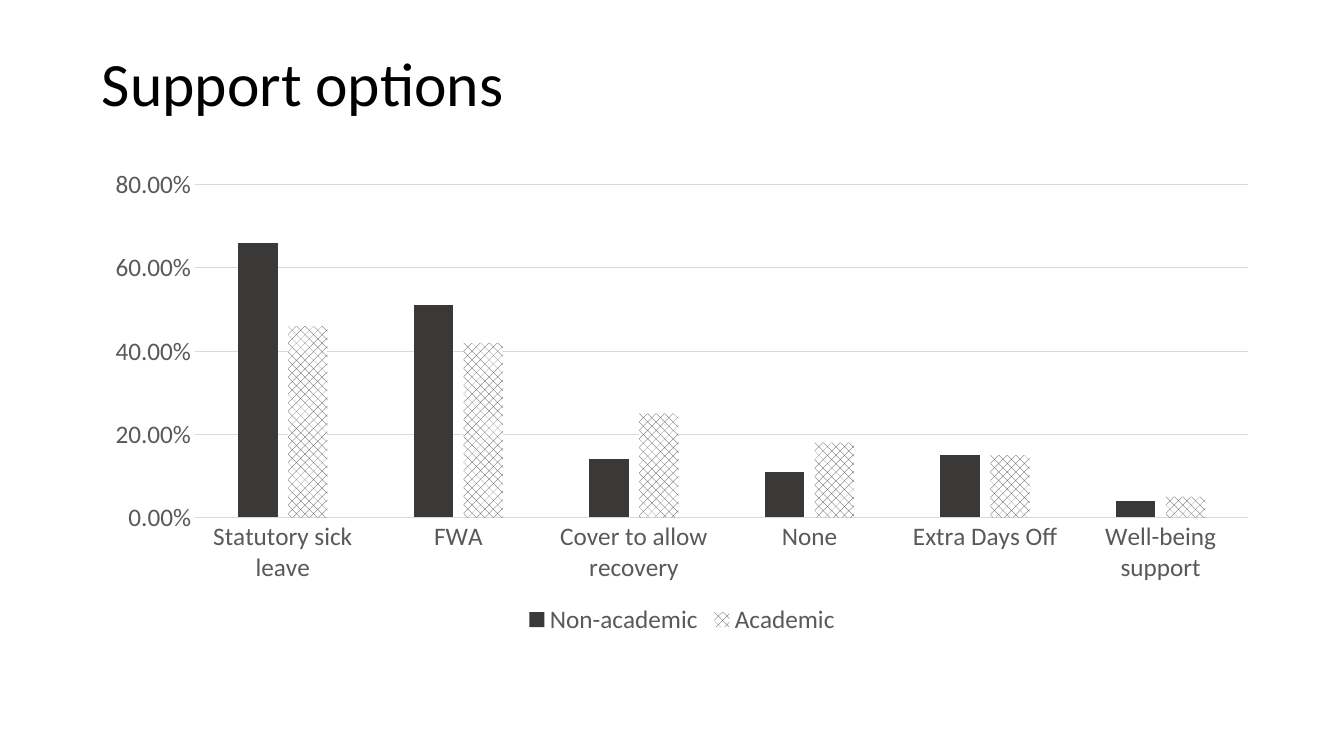
from dataclasses import dataclass

from pptx import Presentation
from pptx.chart.data import CategoryChartData
from pptx.dml.color import RGBColor
from pptx.enum.chart import XL_CHART_TYPE as ChartType
from pptx.enum.chart import XL_LEGEND_POSITION as LegendPosition
from pptx.enum.chart import XL_TICK_MARK as TickMark
from pptx.enum.dml import MSO_PATTERN as Pattern
from pptx.enum.text import MSO_ANCHOR as Anchor
from pptx.util import Pt

TITLE = "Support options"
OPTIONS = ["Statutory sick leave", "FWA", "Cover to allow recovery",
           "None", "Extra Days Off", "Well-being support"]
SHARES = {
    "Non-academic": [0.66, 0.51, 0.14, 0.11, 0.15, 0.04],
    "Academic": [0.46, 0.42, 0.25, 0.18, 0.15, 0.05],
}

SLIDE_SIZE = (1344, 756)
TITLE_BOX = (92, 14, 1160, 146)
CHART_BOX = (92, 160, 1180, 480)
EMU_PER_PX = 914400 / 100.8


@dataclass(frozen=True)
class Theme:
    font: str = "Calibri"
    title_size: int = 44
    label_size: int = 18
    rule_width: float = 0.75
    title: RGBColor = RGBColor(0x00, 0x00, 0x00)
    label: RGBColor = RGBColor(0x59, 0x59, 0x59)
    rule: RGBColor = RGBColor(0xD9, 0xD9, 0xD9)
    bar: RGBColor = RGBColor(0x3B, 0x38, 0x38)
    paper: RGBColor = RGBColor(0xFF, 0xFF, 0xFF)


THEME = Theme()


def px(*lengths):
    return [round(length * EMU_PER_PX) for length in lengths]


def style_font(font, size, color):
    font.name = THEME.font
    font.size = Pt(size)
    font.color.rgb = color


def style_rule(line):
    line.color.rgb = THEME.rule
    line.width = Pt(THEME.rule_width)


def add_title(slide):
    frame = slide.shapes.add_textbox(*px(*TITLE_BOX)).text_frame
    frame.word_wrap = True
    frame.vertical_anchor = Anchor.MIDDLE
    heading = frame.paragraphs[0]
    heading.line_spacing = 0.9
    run = heading.add_run()
    run.text = TITLE
    style_font(run.font, THEME.title_size, THEME.title)


def add_support_chart(slide):
    data = CategoryChartData(number_format="0.00%")
    data.categories = OPTIONS
    for group, shares in SHARES.items():
        data.add_series(group, shares)
    chart = slide.shapes.add_chart(
        ChartType.COLUMN_CLUSTERED, *px(*CHART_BOX), data).chart
    chart.has_title = False
    style_font(chart.font, THEME.label_size, THEME.label)

    chart.has_legend = True
    chart.legend.position = LegendPosition.BOTTOM
    chart.legend.include_in_layout = False
    style_font(chart.legend.font, THEME.label_size, THEME.label)

    options_axis, share_axis = chart.category_axis, chart.value_axis
    for axis in (options_axis, share_axis):
        axis.major_tick_mark = axis.minor_tick_mark = TickMark.NONE
        style_font(axis.tick_labels.font, THEME.label_size, THEME.label)
    style_rule(options_axis.format.line)
    style_rule(share_axis.major_gridlines.format.line)
    share_axis.format.line.fill.background()
    share_axis.minimum_scale, share_axis.maximum_scale = 0, 0.8
    share_axis.major_unit = 0.2
    share_axis.tick_labels.number_format = "0.00%"
    share_axis.tick_labels.number_format_is_linked = False

    bars = chart.plots[0]
    bars.vary_by_categories = False
    bars.gap_width = 219
    bars.overlap = -27
    non_academic, academic = bars.series
    non_academic.format.fill.solid()
    non_academic.format.fill.fore_color.rgb = THEME.bar
    hatch = academic.format.fill
    hatch.patterned()
    hatch.pattern = Pattern.from_xml("pct40")
    hatch.fore_color.rgb = THEME.bar
    hatch.back_color.rgb = THEME.paper


def main():
    deck = Presentation()
    deck.slide_width, deck.slide_height = px(*SLIDE_SIZE)
    slide = deck.slides.add_slide(deck.slide_layouts[6])
    add_title(slide)
    add_support_chart(slide)
    deck.save("out.pptx")


if __name__ == "__main__":
    main()
